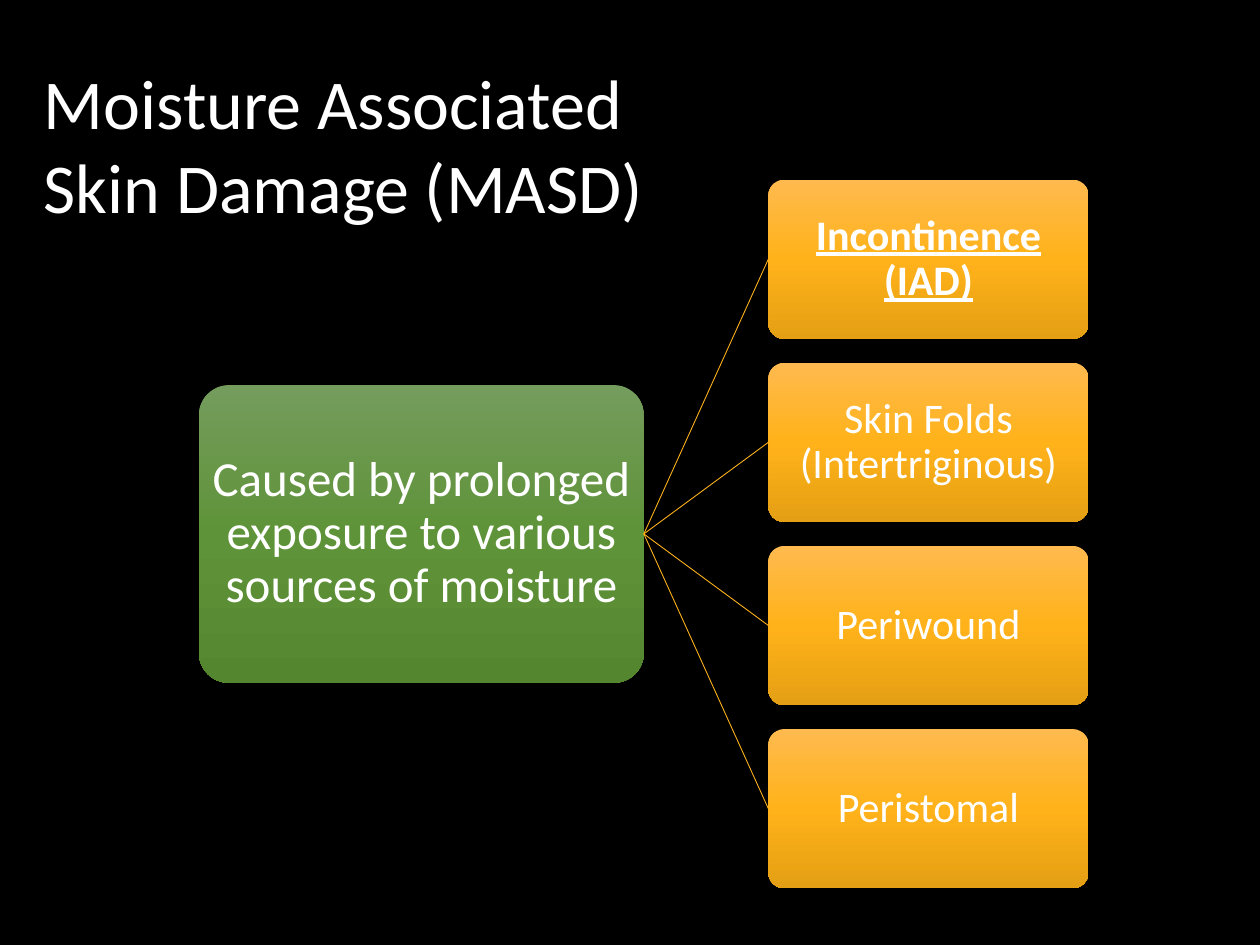
from copy import deepcopy

from lxml import etree
from pptx import Presentation
from pptx import util as u
from pptx.dml.color import RGBColor
from pptx.enum import shapes, text
from pptx.oxml import ns

BLACK = RGBColor(0, 0, 0)
WHITE = RGBColor(255, 255, 255)
GOLD = RGBColor(0xFC, 0xB1, 0x1C)
GREENS = [RGBColor.from_string(c) for c in ("749C5C", "5F9339", "54862F")]
AMBERS = [RGBColor.from_string(c) for c in ("FFBA4F", "FFB219", "E59F14")]
WIDE, HIGH = u.Inches(10), u.Inches(7.5)
TITLE = "Moisture Associated Skin Damage (MASD)"
CAUSE = "Caused by prolonged exposure to various sources of moisture"
TYPES = ["Incontinence (IAD)", "Skin Folds (Intertriginous)", "Periwound", "Peristomal"]


def area(left, top, width, height):
    """Turn shares of the slide into a box of lengths."""
    return [int(n) for n in (left * WIDE, top * HIGH, width * WIDE, height * HIGH)]


def shade(fill, tones):
    """Fill from top to bottom with three evenly spaced tones."""
    fill.gradient()
    fill.gradient_angle = 270
    first = fill._fill._gradFill.find(ns.qn("a:gsLst"))[0]
    first.addnext(deepcopy(first))
    for i, (stop, tone) in enumerate(zip(fill.gradient_stops, tones)):
        stop.position = i / 2
        stop.color.rgb = tone


def style(para, size):
    """Set the white slide font on a paragraph."""
    para.font.name = "Calibri"
    para.font.size = u.Pt(size)
    para.font.color.rgb = WHITE


def node(slide, box, words, tones, size):
    """Add a rounded, shaded box with centred text."""
    shape = slide.shapes.add_shape(shapes.MSO_SHAPE.ROUNDED_RECTANGLE, *box)
    shape.shadow.inherit = False
    shape.adjustments[0] = 0.1
    shape.line.fill.background()
    shade(shape.fill, tones)
    frame = shape.text_frame
    frame.word_wrap = True
    frame.vertical_anchor = text.MSO_ANCHOR.MIDDLE
    frame.margin_left = frame.margin_right = u.Inches(0.02)
    frame.margin_top = frame.margin_bottom = u.Inches(0.02)
    para = frame.paragraphs[0]
    para.text = words
    para.alignment = text.PP_ALIGN.CENTER
    para.line_spacing = 0.9
    style(para, size)
    return shape


def join(slide, start, end):
    """Link the right side of one box to the left side of another."""
    link = slide.shapes.add_connector(shapes.MSO_CONNECTOR.STRAIGHT, 0, 0, 0, 0)
    link.begin_connect(start, 3)
    link.end_connect(end, 1)
    link.line.color.rgb = GOLD
    link.line.width = u.Pt(0.5)
    etree.SubElement(link._element.spPr, ns.qn("a:effectLst"))


def title(slide, box):
    """Add the slide title."""
    frame = slide.shapes.add_textbox(*box).text_frame
    frame.word_wrap = True
    para = frame.paragraphs[0]
    para.text = TITLE
    para.space_after = u.Pt(6)
    style(para, 40)


def tree(slide, box):
    """Add the cause on the left and its types in a column on the right."""
    left, top, width, height = box
    deep = height / (len(TYPES) + 0.15 * (len(TYPES) - 1))
    wide, tall = width * 0.5, height * 0.42
    root = node(slide, [int(n) for n in (left, top + (height - tall) / 2, wide, tall)],
                CAUSE, GREENS, 28)
    for i, name in enumerate(TYPES):
        spot = (left + width * 0.64, top + i * deep * 1.15, width * 0.36, deep)
        leaf = node(slide, [int(n) for n in spot], name, AMBERS, 24)
        if i == 0:
            font = leaf.text_frame.paragraphs[0].font
            font.bold = font.underline = True
        join(slide, root, leaf)


def main():
    """Build and save the slide."""
    deck = Presentation()
    deck.slide_width, deck.slide_height = WIDE, HIGH
    slide = deck.slides.add_slide(deck.slide_layouts[6])
    slide.background.fill.solid()
    slide.background.fill.fore_color.rgb = BLACK
    tree(slide, area(0.158, 0.19, 0.706, 0.75))
    title(slide, area(0.025, 0.056, 0.58, 0.193))
    deck.save("out.pptx")


if __name__ == "__main__":
    main()
